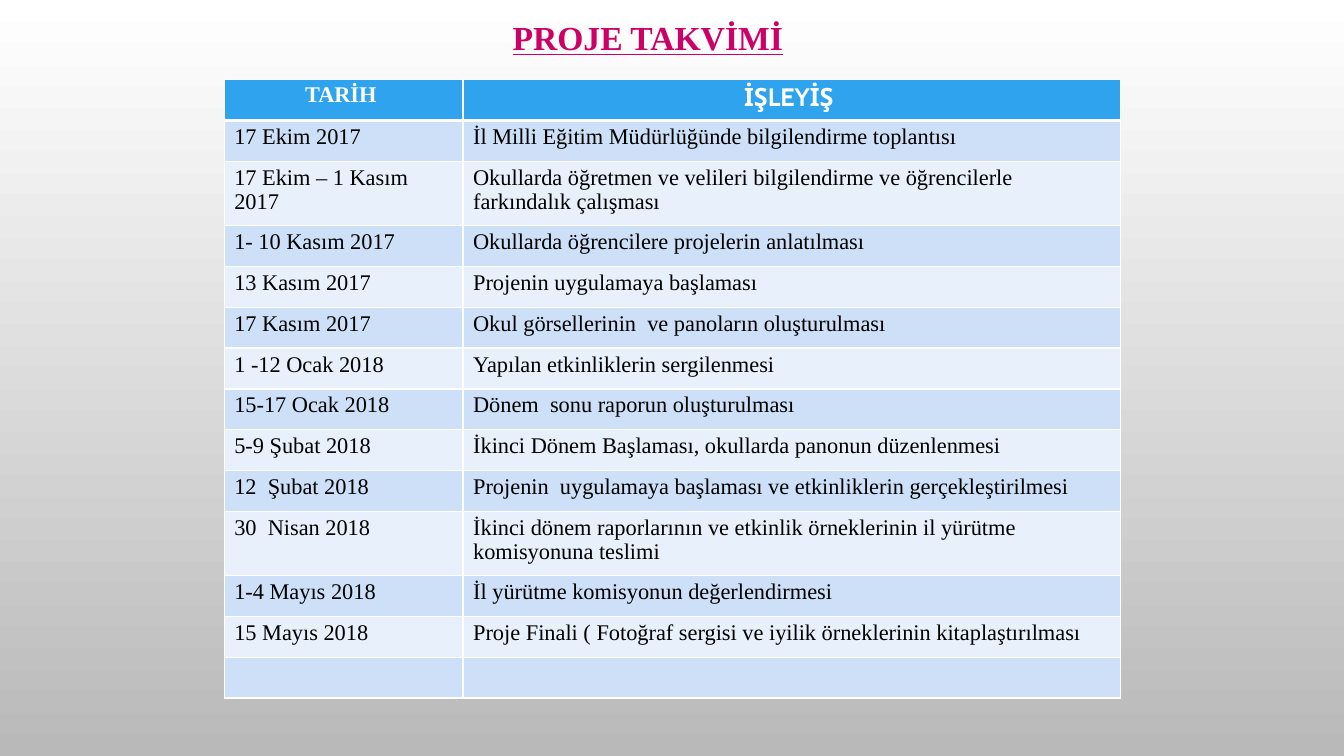
from dataclasses import dataclass

from lxml import etree
from pptx import Presentation
from pptx.dml.color import RGBColor
from pptx.enum.text import MSO_ANCHOR, MSO_AUTO_SIZE, PP_ALIGN
from pptx.oxml.ns import qn
from pptx.util import Cm, Pt

CENTER, LEFT = PP_ALIGN.CENTER, PP_ALIGN.LEFT
MIDDLE = MSO_ANCHOR.MIDDLE
NO_AUTOFIT = MSO_AUTO_SIZE.NONE

TITLE = "PROJE TAKVİMİ"
HEADINGS = ("TARİH ", "İŞLEYİŞ ")
CALENDAR = [
    ("17 Ekim 2017", "İl Milli Eğitim Müdürlüğünde bilgilendirme toplantısı"),
    ("17 Ekim – 1 Kasım 2017",
     "Okullarda öğretmen ve velileri bilgilendirme ve öğrencilerle  farkındalık çalışması"),
    ("1- 10 Kasım 2017", "Okullarda öğrencilere projelerin anlatılması"),
    ("13 Kasım 2017", "Projenin uygulamaya başlaması"),
    ("17 Kasım 2017", "Okul görsellerinin  ve panoların oluşturulması"),
    ("1 -12 Ocak 2018", "Yapılan etkinliklerin sergilenmesi"),
    ("15-17 Ocak 2018", "Dönem  sonu raporun oluşturulması"),
    ("5-9 Şubat 2018", "İkinci Dönem Başlaması, okullarda panonun düzenlenmesi"),
    ("12  Şubat 2018", "Projenin  uygulamaya başlaması ve etkinliklerin gerçekleştirilmesi"),
    ("30  Nisan 2018",
     "İkinci dönem raporlarının ve etkinlik örneklerinin il yürütme komisyonuna teslimi"),
    ("1-4 Mayıs 2018", "İl yürütme komisyonun değerlendirmesi"),
    ("15 Mayıs 2018", "Proje Finali ( Fotoğraf sergisi ve iyilik örneklerinin kitaplaştırılması"),
    ("", ""),
]


@dataclass(frozen=True)
class Theme:
    serif: str = "Times New Roman"
    sans: str = "Cabin"
    title_size: int = 24
    heading_size: int = 18
    body_size: int = 16
    title: str = "CC0066"
    header: str = "2FA3EE"
    bands: tuple = ("CDE0F8", "E8F0FC")
    white: str = "FFFFFF"
    black: str = "000000"
    backdrop: tuple = ("FFFFFF", "B9B9B9")


THEME = Theme()
COLUMN_WIDTHS = (Cm(6.02), Cm(16.56))
LINE_HEIGHT, WRAPPED_HEIGHT = Cm(1.03), Cm(1.61)
WRAP_LENGTH = 75  # characters that fit on one line of the wide column


def write(frame, text, *, size, color, font=THEME.serif, bold=False,
          underline=None, align=LEFT, spacing=0.95):
    paragraph = frame.paragraphs[0]
    paragraph.alignment = align
    paragraph.line_spacing = spacing
    if not text:
        return
    run = paragraph.add_run()
    run.text = text
    run.font.name = font
    run.font.size = Pt(size)
    run.font.bold = bold
    run.font.underline = underline
    run.font.color.rgb = RGBColor.from_string(color)


def format_cell(cell, fill, bottom_width):
    """Fill a cell and give it white borders."""
    properties = cell._tc.get_or_add_tcPr()
    for side, width in (("L", 1), ("R", 1), ("T", 1), ("B", bottom_width)):
        line = etree.SubElement(properties, qn(f"a:ln{side}"), w=str(Pt(width)))
        solid = etree.SubElement(line, qn("a:solidFill"))
        etree.SubElement(solid, qn("a:srgbClr"), val=THEME.white)
    cell.fill.solid()
    cell.fill.fore_color.rgb = RGBColor.from_string(fill)


def add_background(slide):
    fill = slide.background.fill
    fill.gradient()
    fill.gradient_angle = 270
    for stop, color in zip(fill.gradient_stops, THEME.backdrop):
        stop.color.rgb = RGBColor.from_string(color)


def add_title(slide):
    title = slide.shapes.title
    title.left, title.top, title.width, title.height = Cm(8.3), Cm(0.3), Cm(16.05), Cm(1.28)
    frame = title.text_frame
    frame.word_wrap = True
    frame.auto_size = NO_AUTOFIT
    frame.vertical_anchor = MIDDLE
    write(frame, TITLE, size=THEME.title_size, color=THEME.title,
          bold=True, underline=True, align=CENTER, spacing=1.0)


def add_calendar(slide):
    heights = [LINE_HEIGHT] + [
        WRAPPED_HEIGHT if len(activity) > WRAP_LENGTH else LINE_HEIGHT
        for _, activity in CALENDAR
    ]
    table = slide.shapes.add_table(len(heights), len(HEADINGS), Cm(5.65), Cm(2.01),
                                   sum(COLUMN_WIDTHS), sum(heights)).table
    for column, width in zip(table.columns, COLUMN_WIDTHS):
        column.width = width
    for row, height in zip(table.rows, heights):
        row.height = height

    heading_styles = ((THEME.serif, THEME.body_size), (THEME.sans, THEME.heading_size))
    for index, (heading, (font, size)) in enumerate(zip(HEADINGS, heading_styles)):
        cell = table.cell(0, index)
        format_cell(cell, THEME.header, 3)
        write(cell.text_frame, heading, font=font, size=size, color=THEME.white,
              bold=True, align=CENTER, spacing=0.9)

    for row_index, entry in enumerate(CALENDAR, start=1):
        for column_index, text in enumerate(entry):
            cell = table.cell(row_index, column_index)
            format_cell(cell, THEME.bands[(row_index - 1) % 2], 1)
            write(cell.text_frame, text, size=THEME.body_size, color=THEME.black)


def main():
    presentation = Presentation()
    presentation.slide_width, presentation.slide_height = Cm(33.87), Cm(19.05)
    slide = presentation.slides.add_slide(presentation.slide_layouts[5])
    add_background(slide)
    add_title(slide)
    add_calendar(slide)
    presentation.save("out.pptx")


if __name__ == "__main__":
    main()
